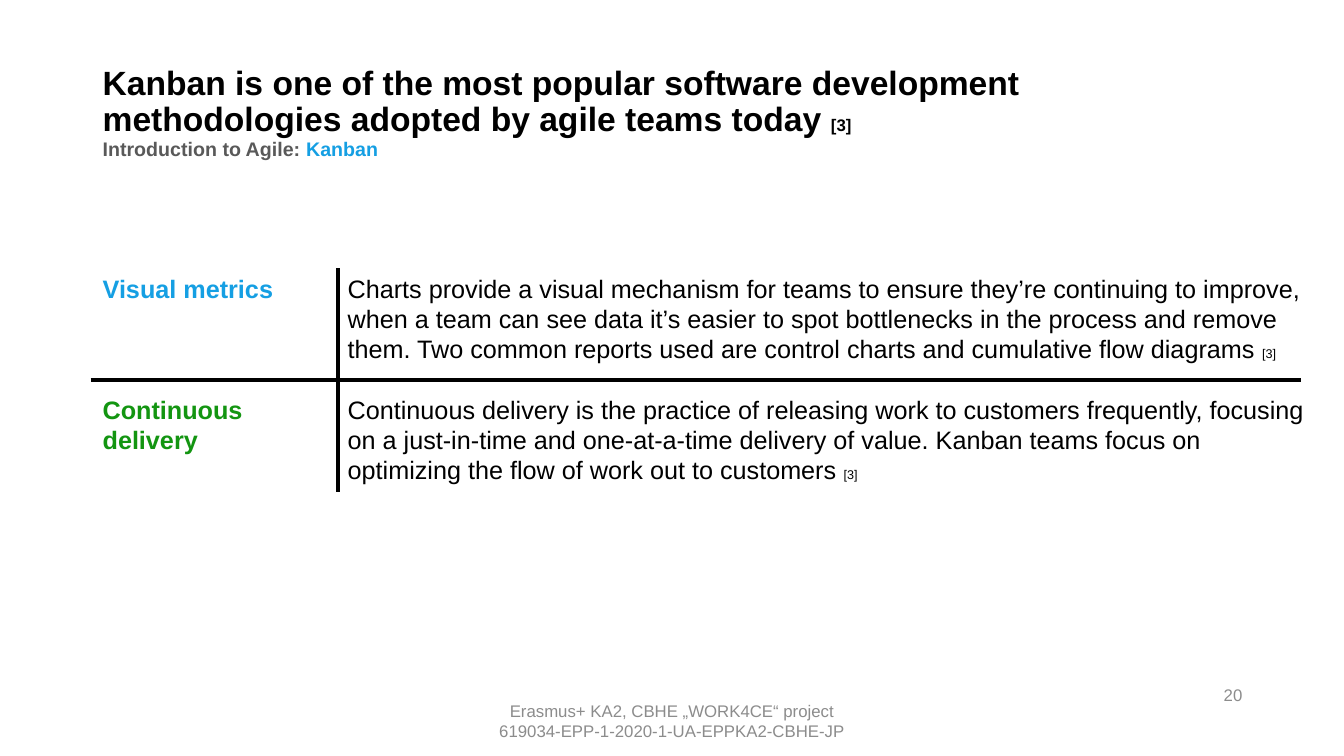
from lxml import etree
from pptx import Presentation
from pptx.dml.color import RGBColor
from pptx.enum.shapes import MSO_CONNECTOR
from pptx.enum.text import MSO_ANCHOR, PP_ALIGN
from pptx.oxml.ns import qn
from pptx.util import Inches, Pt

LEFT, CENTER, RIGHT = PP_ALIGN.LEFT, PP_ALIGN.CENTER, PP_ALIGN.RIGHT
TOP, MIDDLE = MSO_ANCHOR.TOP, MSO_ANCHOR.MIDDLE
STRAIGHT = MSO_CONNECTOR.STRAIGHT

FONT = "Arial"
BLACK, GRAY, DARK_GRAY = "000000", "8C8C8C", "595959"
BLUE, GREEN = "159FE3", "139511"

# Each run is (text, size, colour, bold)
TITLE = [
    ("Kanban is one of the most popular software development "
     "methodologies adopted by agile teams today ", 24, BLACK, True),
    ("[3]\v", 12, BLACK, True),
    ("Introduction to Agile: ", 14, DARK_GRAY, True),
    ("Kanban", 14, BLUE, True),
]
FOOTER = [("Erasmus+ KA2, CBHE „WORK4CE“ project\v"
           "619034-EPP-1-2020-1-UA-EPPKA2-CBHE-JP", 12, GRAY, False)]
PAGE_NUMBER = [("20", 12, GRAY, False)]
PRACTICES = [
    ("Visual metrics", BLUE,
     "Charts provide a visual mechanism for teams to ensure they’re continuing "
     "to improve, when a team can see data it’s easier to spot bottlenecks in "
     "the process and remove them. Two common reports used are control charts "
     "and cumulative flow diagrams "),
    ("Continuous delivery", GREEN,
     "Continuous delivery is the practice of releasing work to customers "
     "frequently, focusing on a just-in-time and one-at-a-time delivery of "
     "value. Kanban teams focus on optimizing the flow of work out to customers "),
]
CITATION = ("[3]", 9, BLACK, False)

LABEL_LEFT, DIVIDER_X, TEXT_RIGHT = 0.92, 3.35, 13.05
ROWS_TOP, ROW_STEP, ROW_HEIGHT = 2.66, 1.2, 1.0


def color(hex_value):
    return RGBColor.from_string(hex_value)


def add_text(slide, box, runs, align=LEFT, anchor=TOP, wrap=True, spacing=None):
    shape = slide.shapes.add_textbox(*map(Inches, box))
    frame = shape.text_frame
    frame.word_wrap = wrap
    frame.vertical_anchor = anchor
    paragraph = frame.paragraphs[0]
    paragraph.alignment = align
    paragraph.line_spacing = spacing
    paragraph.font.name = FONT
    for text, size, hex_value, bold in runs:
        # A vertical tab marks a line break inside the paragraph
        for index, piece in enumerate(text.split("\v")):
            if index:
                paragraph.add_line_break()
            if piece:
                run = paragraph.add_run()
                run.text = piece
                run.font.name = FONT
                run.font.size = Pt(size)
                run.font.bold = bold
                run.font.color.rgb = color(hex_value)


def add_rule(slide, start, end):
    connector = slide.shapes.add_connector(STRAIGHT, *map(Inches, start + end))
    connector.line.color.rgb = color(BLACK)
    connector.line.width = Pt(3)
    etree.SubElement(connector._element.spPr, qn("a:effectLst"))


def main():
    presentation = Presentation()
    presentation.slide_width = Inches(13.33)
    presentation.slide_height = Inches(7.5)
    slide = presentation.slides.add_slide(presentation.slide_layouts[6])

    add_text(slide, (4.84, 6.9, 3.65, 0.5), FOOTER, CENTER, wrap=False)
    add_text(slide, (LABEL_LEFT, 0.88, 11.7, 0.49), TITLE,
             anchor=MIDDLE, spacing=0.9)
    add_text(slide, (11.47, 6.69, 0.95, 0.4), PAGE_NUMBER, RIGHT, MIDDLE)

    for row, (label, label_color, description) in enumerate(PRACTICES):
        top = ROWS_TOP + row * ROW_STEP
        add_text(slide, (LABEL_LEFT, top, DIVIDER_X - LABEL_LEFT, ROW_HEIGHT),
                 [(label, 18, label_color, True)])
        add_text(slide, (DIVIDER_X, top, TEXT_RIGHT - DIVIDER_X, ROW_HEIGHT),
                 [(description, 18, BLACK, False), CITATION])

    add_rule(slide, (DIVIDER_X, 2.66), (DIVIDER_X, 4.88))
    add_rule(slide, (0.9, 3.77), (12.9, 3.77))
    presentation.save("out.pptx")


if __name__ == "__main__":
    main()
